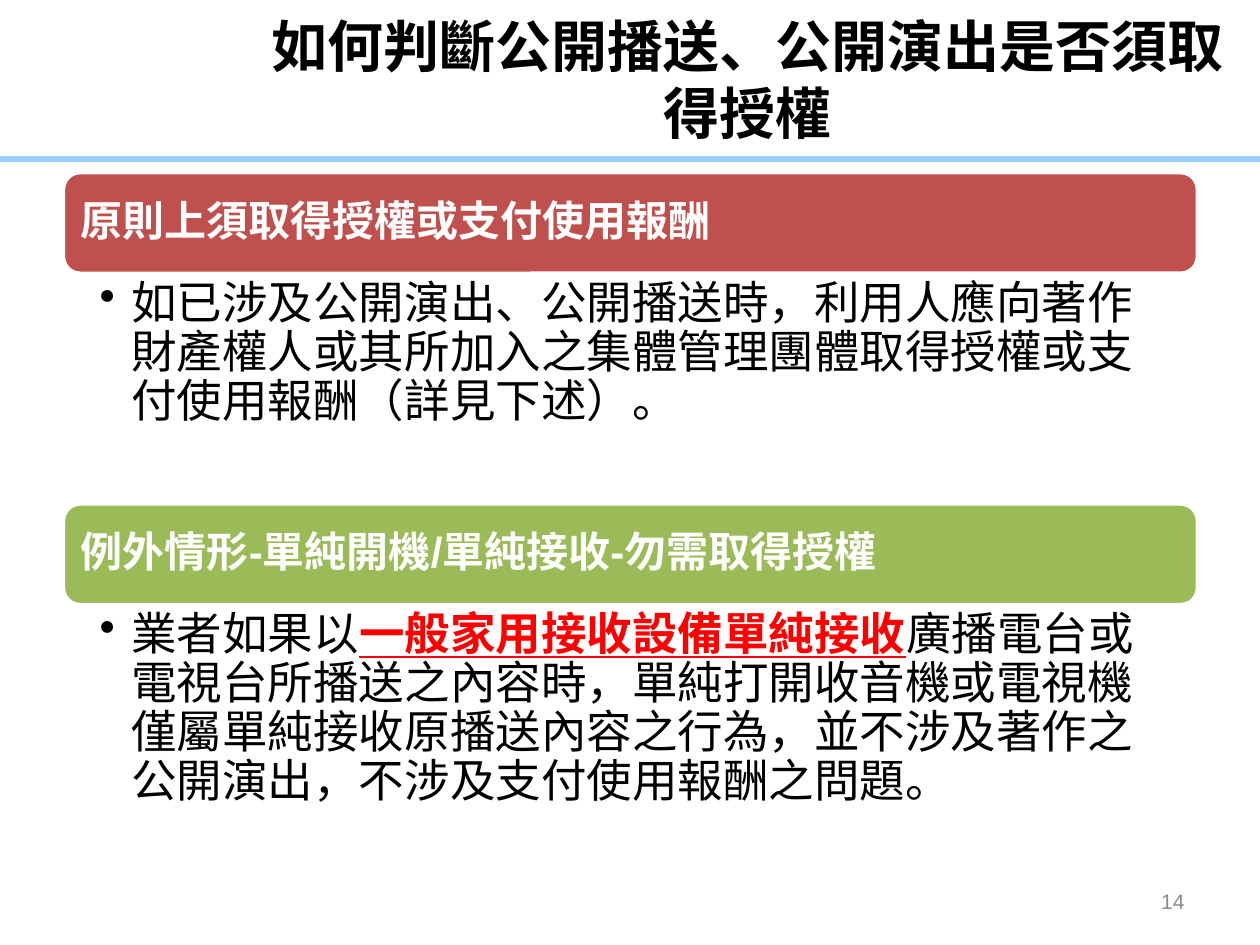
from dataclasses import dataclass

from lxml import etree
from pptx import Presentation
from pptx.dml.color import RGBColor
from pptx.enum.shapes import MSO_SHAPE
from pptx.enum.text import MSO_ANCHOR, PP_ALIGN
from pptx.oxml.ns import qn
from pptx.util import Cm, Pt

RECTANGLE, ROUNDED = MSO_SHAPE.RECTANGLE, MSO_SHAPE.ROUNDED_RECTANGLE
TOP, MIDDLE = MSO_ANCHOR.TOP, MSO_ANCHOR.MIDDLE
LEFT, CENTER, RIGHT = PP_ALIGN.LEFT, PP_ALIGN.CENTER, PP_ALIGN.RIGHT


@dataclass(frozen=True)
class Theme:
    latin: str = "Arial"
    east_asian: str = "Noto Sans CJK SC"
    black: str = "000000"
    white: str = "FFFFFF"
    emphasis: str = "FF0000"
    rule: str = "99CCFF"
    principle: str = "C0504D"
    exception: str = "9BBB59"
    number: str = "8C8C8C"
    title_size: float = 32
    heading_size: float = 24
    body_size: float = 26
    number_size: float = 12


@dataclass(frozen=True)
class Run:
    text: str
    emphasized: bool = False


@dataclass(frozen=True)
class Section:
    heading: str
    color: str
    top: float
    body_height: float
    body: tuple[Run, ...]


THEME = Theme()
SECTION_LEFT, SECTION_WIDTH, HEADING_HEIGHT = 1.28, 22.86, 2.03
SECTIONS = (
    Section("原則上須取得授權或支付使用報酬", THEME.principle, 3.48, 4.65, (
        Run("如已涉及公開演出、公開播送時，利用人應向著作財產權人或其所加入之"
            "集體管理團體取得授權或支付使用報酬（詳見下述）。"),
    )),
    Section("例外情形-單純開機/單純接收-勿需取得授權", THEME.exception, 10.16, 5.97, (
        Run("業者如果以"),
        Run("一般家用接收設備單純接收", emphasized=True),
        Run("廣播電台或電視台所播送之內容時，單純打開收音機或電視機僅屬單純接收"
            "原播送內容之行為，並不涉及著作之公開演出，不涉及支付使用報酬之問題。"),
    )),
)


def write_text(shape, runs: tuple[Run, ...], *, size: float, color: str,
               font: str = THEME.latin, bold: bool = False, align=LEFT,
               anchor=MIDDLE, margins=(0.25, 0.13, 0.25, 0.13),
               line_spacing: float = 1.0, bullet: bool = False) -> None:
    """Fill a shape with one paragraph; margins run left, top, right, bottom in cm."""
    frame = shape.text_frame
    frame.word_wrap = True
    frame.vertical_anchor = anchor
    (frame.margin_left, frame.margin_top,
     frame.margin_right, frame.margin_bottom) = map(Cm, margins)
    paragraph = frame.paragraphs[0]
    paragraph.alignment = align
    paragraph.line_spacing = line_spacing
    if bullet:
        paragraph.level = 1
        properties = paragraph._p.get_or_add_pPr()
        properties.set("marL", str(Cm(0.64)))
        properties.set("indent", str(Cm(-0.64)))
        etree.SubElement(properties, qn("a:buChar")).set("char", "•")
    for item in runs:
        run = paragraph.add_run()
        run.text = item.text
        run.font.name = font
        run.font.size = Pt(size)
        run.font.bold = bold or item.emphasized
        run.font.underline = item.emphasized
        run.font.color.rgb = RGBColor.from_string(
            THEME.emphasis if item.emphasized else color)
        latin = run._r.rPr.find(qn("a:latin"))
        east_asian = etree.Element(qn("a:ea"), typeface=THEME.east_asian)
        latin.addnext(east_asian)


def add_block(slide, kind, left: float, top: float, width: float, height: float,
              color: str):
    shape = slide.shapes.add_shape(kind, Cm(left), Cm(top), Cm(width), Cm(height))
    shape.shadow.inherit = False
    shape.fill.solid()
    shape.fill.fore_color.rgb = RGBColor.from_string(color)
    shape.line.fill.background()
    return shape


def add_text(slide, left: float, top: float, width: float, height: float,
             runs: tuple[Run, ...], **text_format) -> None:
    box = slide.shapes.add_textbox(Cm(left), Cm(top), Cm(width), Cm(height))
    write_text(box, runs, **text_format)


def add_section(slide, section: Section) -> None:
    heading = add_block(slide, ROUNDED, SECTION_LEFT, section.top,
                        SECTION_WIDTH, HEADING_HEIGHT, section.color)
    heading.line.color.rgb = RGBColor.from_string(THEME.white)
    heading.line.width = Pt(2)
    write_text(heading, (Run(section.heading),), size=THEME.heading_size,
               color=THEME.white, bold=True, line_spacing=0.9,
               margins=(0.25, 0.25, 0.25, 0.25))
    add_text(slide, SECTION_LEFT, section.top + HEADING_HEIGHT, SECTION_WIDTH,
             section.body_height, section.body, size=THEME.body_size,
             color=THEME.black, anchor=TOP, line_spacing=0.9, bullet=True,
             margins=(0.73, 0.13, 0.65, 0.13))


def main() -> None:
    presentation = Presentation()
    presentation.slide_width, presentation.slide_height = Cm(25.4), Cm(19.05)
    slide = presentation.slides.add_slide(presentation.slide_layouts[6])
    add_block(slide, RECTANGLE, -0.1, 3.15, 25.55, 0.12, THEME.rule)
    add_text(slide, 4.75, 0, 20.65, 3.17,
             (Run("如何判斷公開播送、公開演出是否須取得授權"),),
             size=THEME.title_size, color=THEME.black, font=THEME.east_asian,
             bold=True, align=CENTER)
    for section in SECTIONS:
        add_section(slide, section)
    add_text(slide, 18.2, 17.66, 5.93, 1.01, (Run("14"),),
             size=THEME.number_size, color=THEME.number, align=RIGHT)
    presentation.save("out.pptx")


if __name__ == "__main__":
    main()
